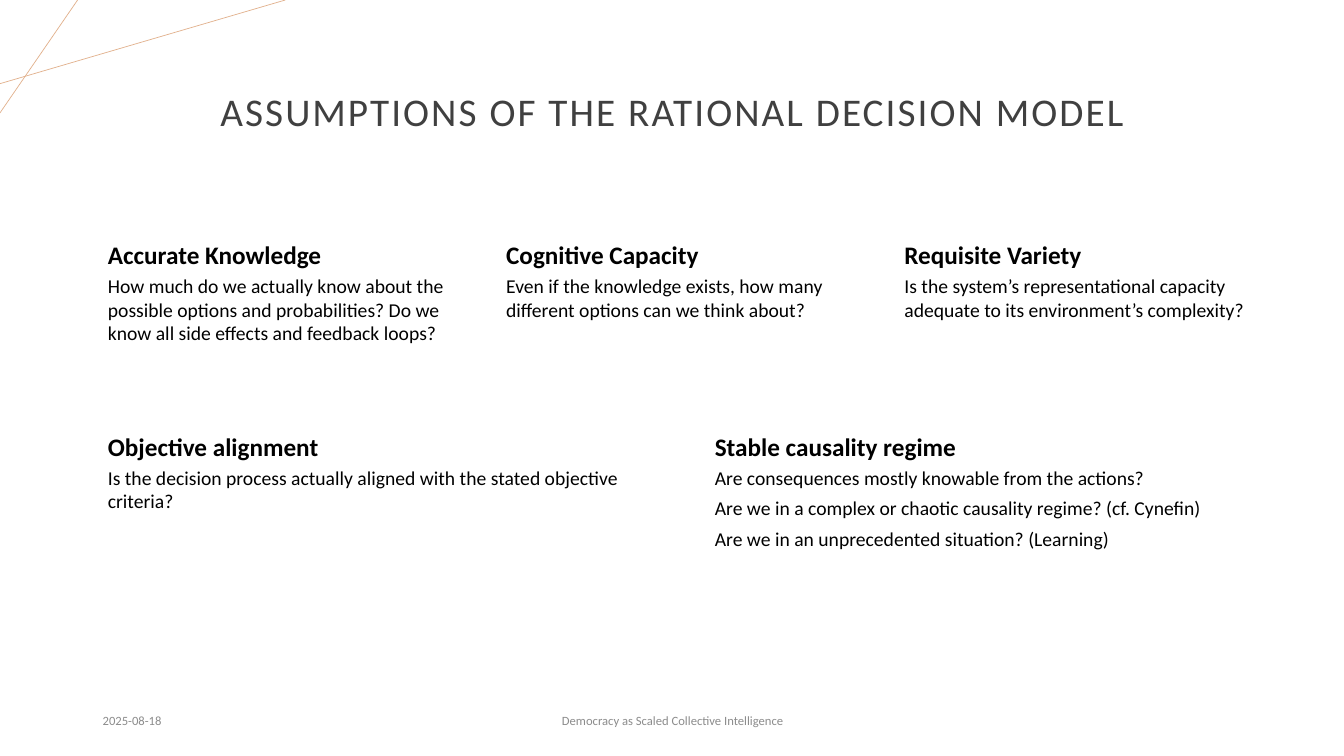
from dataclasses import dataclass

from pptx import Presentation
from pptx.dml.color import RGBColor
from pptx.enum.shapes import MSO_CONNECTOR
from pptx.enum.text import MSO_ANCHOR, MSO_AUTO_SIZE, PP_ALIGN
from pptx.oxml.ns import qn
from pptx.slide import Slide
from pptx.text.text import TextFrame
from pptx.util import Inches, Pt
from lxml import etree

STRAIGHT = MSO_CONNECTOR.STRAIGHT
TOP, MIDDLE = MSO_ANCHOR.TOP, MSO_ANCHOR.MIDDLE
LEFT, CENTER = PP_ALIGN.LEFT, PP_ALIGN.CENTER
NO_AUTOFIT = MSO_AUTO_SIZE.NONE
MARGIN = 0.92


@dataclass(frozen=True)
class TextStyle:
    size: float
    color: str
    bold: bool = False
    align: PP_ALIGN = LEFT
    anchor: MSO_ANCHOR = TOP
    insets: tuple[float, float, float, float] = (0.1, 0.05, 0.1, 0.05)
    space_after: float = 0
    line_spacing: float = 1.0
    letter_spacing: float = 0


@dataclass(frozen=True)
class Assumption:
    heading: str
    questions: tuple[str, ...]


@dataclass(frozen=True)
class AssumptionRow:
    top: float
    heading_height: float
    width: float
    pitch: float
    assumptions: tuple[Assumption, ...]


@dataclass(frozen=True)
class AccentLine:
    start: tuple[float, float]
    end: tuple[float, float]


TITLE = TextStyle(28, "404040", align=CENTER, anchor=MIDDLE,
                  line_spacing=0.9, letter_spacing=1.5)
DATE = TextStyle(9, "8C8C8C", anchor=MIDDLE, space_after=6)
FOOTER = TextStyle(9, "8C8C8C", align=CENTER, anchor=MIDDLE, space_after=6)
HEADING = TextStyle(18, "000000", bold=True, insets=(0.15, 0.03, 0.03, 0.03),
                    space_after=6.3)
QUESTION = TextStyle(14, "000000", insets=(0.15, 0.02, 0.02, 0.02),
                     space_after=4.9)
QUESTION_HEIGHT = 1.19

ACCENT_LINES = (
    AccentLine((0, 0.83), (2.83, 0)),
    AccentLine((0.77, 0), (0, 1.12)),
)

ROWS = (
    AssumptionRow(2.34, 0.36, 3.59, 3.95, (
        Assumption("Accurate Knowledge", (
            "How much do we actually know about the possible options and "
            "probabilities? Do we know all side effects and feedback loops?",)),
        Assumption("Cognitive Capacity", (
            "Even if the knowledge exists, how many different options can we "
            "think about?",)),
        Assumption("Requisite Variety", (
            "Is the system’s representational capacity adequate to its "
            "environment’s complexity?",)),
    )),
    AssumptionRow(4.25, 0.35, 5.47, 6.02, (
        Assumption("Objective alignment", (
            "Is the decision process actually aligned with the stated "
            "objective criteria?",)),
        Assumption("Stable causality regime", (
            "Are consequences mostly knowable from the actions?",
            "Are we in a complex or chaotic causality regime? (cf. Cynefin)",
            "Are we in an unprecedented situation? (Learning)")),
    )),
)


def color(value: str) -> RGBColor:
    return RGBColor.from_string(value)


def write_text(frame: TextFrame, lines: tuple[str, ...], style: TextStyle) -> None:
    frame.word_wrap = True
    frame.auto_size = NO_AUTOFIT
    frame.vertical_anchor = style.anchor
    (frame.margin_left, frame.margin_top,
     frame.margin_right, frame.margin_bottom) = map(Inches, style.insets)
    for index, line in enumerate(lines):
        paragraph = frame.add_paragraph() if index else frame.paragraphs[0]
        paragraph.alignment = style.align
        paragraph.line_spacing = style.line_spacing
        paragraph.space_before = Pt(0)
        paragraph.space_after = Pt(style.space_after)
        run = paragraph.add_run()
        run.text = line
        run.font.name = "Calibri"
        run.font.size = Pt(style.size)
        run.font.bold = style.bold
        run.font.color.rgb = color(style.color)
        if style.letter_spacing:
            run.font._element.set("spc", str(round(style.letter_spacing * 100)))


def add_text(slide: Slide, left: float, top: float, width: float, height: float,
             lines: tuple[str, ...], style: TextStyle) -> None:
    box = slide.shapes.add_textbox(*map(Inches, (left, top, width, height)))
    write_text(box.text_frame, lines, style)


def add_accent_line(slide: Slide, accent: AccentLine) -> None:
    line = slide.shapes.add_connector(
        STRAIGHT, *map(Inches, (*accent.start, *accent.end)))
    line.line.color.rgb = color("E2B18D")
    line.line.width = Pt(0.5)
    etree.SubElement(line._element.spPr, qn("a:effectLst"))


def add_title(slide: Slide, text: str) -> None:
    title = slide.shapes.title
    title.left, title.top = Inches(MARGIN), Inches(0.4)
    title.width, title.height = Inches(11.5), Inches(1.45)
    write_text(title.text_frame, (text,), TITLE)


def add_row(slide: Slide, row: AssumptionRow) -> None:
    for column, assumption in enumerate(row.assumptions):
        left = MARGIN + column * row.pitch
        add_text(slide, left, row.top, row.width, row.heading_height,
                 (assumption.heading,), HEADING)
        add_text(slide, left, row.top + row.heading_height, row.width,
                 QUESTION_HEIGHT, assumption.questions, QUESTION)


def main() -> None:
    deck = Presentation()
    deck.slide_width, deck.slide_height = Inches(13.33), Inches(7.5)
    slide = deck.slides.add_slide(deck.slide_layouts.get_by_name("Title Only"))
    slide.background.fill.solid()
    slide.background.fill.fore_color.rgb = color("FFFFFF")
    for accent in ACCENT_LINES:
        add_accent_line(slide, accent)
    add_title(slide, "ASSUMPTIONS OF THE RATIONAL DECISION MODEL")
    add_text(slide, MARGIN, 6.95, 3, 0.4, ("2025-08-18",), DATE)
    add_text(slide, 4.42, 6.95, 4.5, 0.4,
             ("Democracy as Scaled Collective Intelligence",), FOOTER)
    for row in ROWS:
        add_row(slide, row)
    deck.save("out.pptx")


if __name__ == "__main__":
    main()
